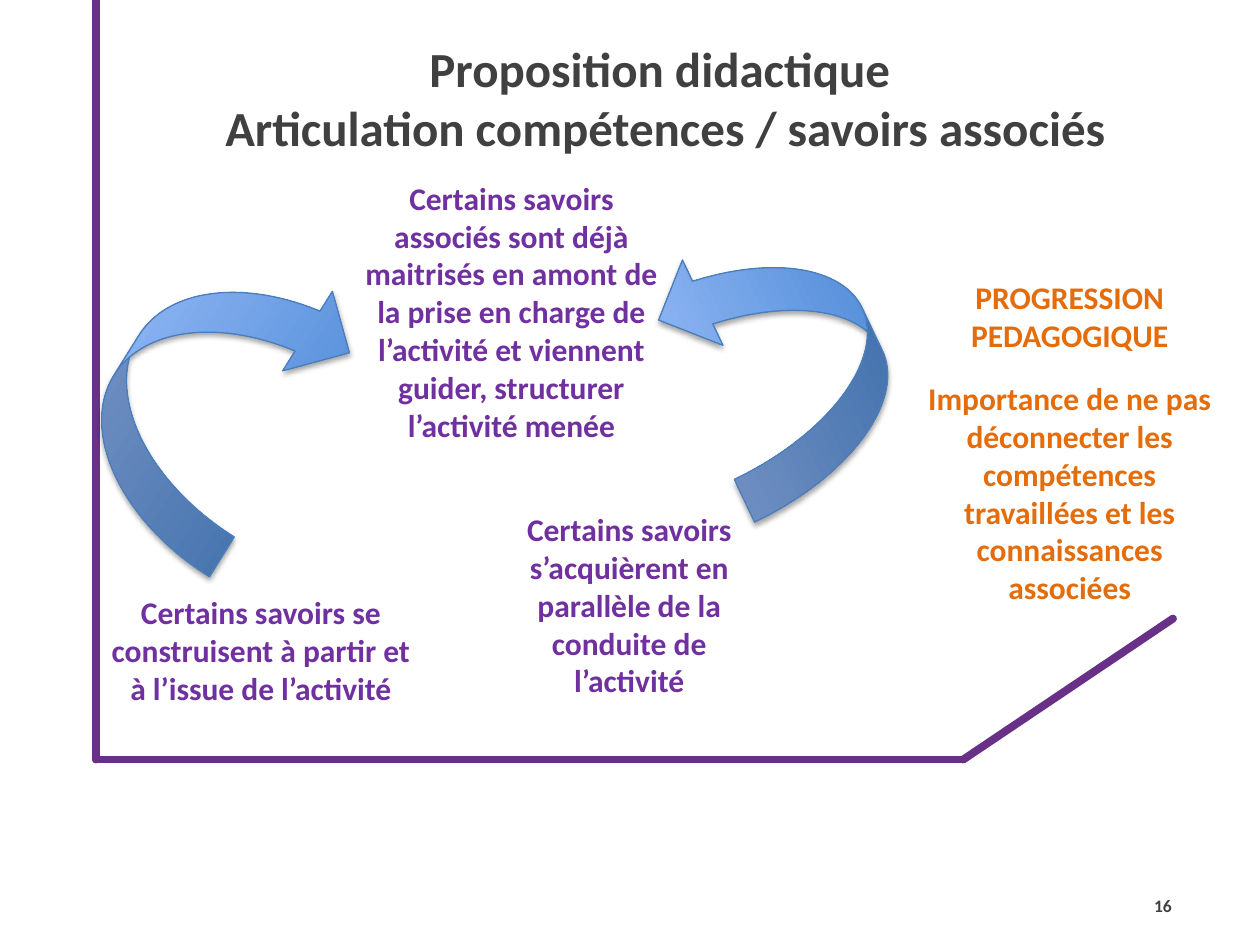
from lxml.etree import SubElement
from pptx import Presentation
from pptx.dml.color import RGBColor
from pptx.enum.shapes import MSO_CONNECTOR, MSO_SHAPE
from pptx.enum.text import MSO_ANCHOR, PP_ALIGN
from pptx.oxml import parse_xml
from pptx.oxml.ns import nsdecls, qn
from pptx.util import Pt

FRAME_PURPLE = RGBColor(0x68, 0x30, 0x86)
TEXT_PURPLE = RGBColor(0x70, 0x30, 0xA0)
ORANGE = RGBColor(0xE4, 0x6C, 0x0A)
DARK_GREY = RGBColor(0x40, 0x40, 0x40)
ARROW_DARK = RGBColor(0x3F, 0x80, 0xCE)
ARROW_LIGHT = RGBColor(0xA4, 0xC4, 0xFF)
ARROW_LINE = RGBColor(0x4B, 0x7E, 0xBC)

ARROW_SHADOW = (
    f'<a:effectLst {nsdecls("a")}>'
    '<a:outerShdw blurRad="39400" dist="22900" dir="5400000" rotWithShape="0">'
    '<a:srgbClr val="000000"><a:alpha val="35000"/></a:srgbClr>'
    "</a:outerShdw></a:effectLst>"
)


class SlideBuilder:
    """Holds the style and the current slide; lengths are in points."""

    font_name = "Calibri"
    frame_width = 4.5

    def __init__(self, slide):
        self.slide = slide

    def frame_line(self, start, end):
        line = self.slide.shapes.add_connector(
            MSO_CONNECTOR.STRAIGHT, *(Pt(value) for value in (*start, *end))
        )
        line.line.color.rgb = FRAME_PURPLE
        line.line.width = Pt(self.frame_width)
        properties = line._element.spPr
        properties.find(qn("a:ln")).set("cap", "rnd")
        SubElement(properties, qn("a:effectLst"))

    def text(self, box, lines, color, size=18, align=PP_ALIGN.CENTER,
             anchor=MSO_ANCHOR.TOP):
        """Each line is a (text, space before) pair."""
        shape = self.slide.shapes.add_textbox(*(Pt(value) for value in box))
        frame = shape.text_frame
        frame.word_wrap = True
        frame.vertical_anchor = anchor
        for index, (content, space_before) in enumerate(lines):
            paragraph = frame.add_paragraph() if index else frame.paragraphs[0]
            paragraph.text = content
            paragraph.alignment = align
            if space_before:
                paragraph.space_before = Pt(space_before)
            paragraph.font.name = self.font_name
            paragraph.font.size = Pt(size)
            paragraph.font.bold = True
            paragraph.font.color.rgb = color

    def curved_arrow(self, kind, box, rotation):
        shape = self.slide.shapes.add_shape(kind, *(Pt(value) for value in box))
        shape.rotation = rotation
        shape.fill.gradient()
        shape.fill.gradient_angle = 90
        for stop, color in zip(shape.fill.gradient_stops, (ARROW_DARK, ARROW_LIGHT)):
            stop.color.rgb = color
        shape.line.color.rgb = ARROW_LINE
        shape.line.width = Pt(0.75)
        shape._element.spPr.append(parse_xml(ARROW_SHADOW))


def main():
    presentation = Presentation()
    presentation.slide_width = Pt(720)
    presentation.slide_height = Pt(540)
    builder = SlideBuilder(presentation.slides.add_slide(presentation.slide_layouts[6]))

    # Purple frame
    corners = [(54.8, 0), (54.8, 434), (550.5, 434), (670.3, 353.5)]
    for start, end in zip(corners, corners[1:]):
        builder.frame_line(start, end)

    # Slide number and title
    builder.text((645, 503.3, 31.7, 28.8), [("16", 0)], DARK_GREY, 10,
                 PP_ALIGN.RIGHT, MSO_ANCHOR.MIDDLE)
    builder.text((65.5, 18.7, 629.3, 395.3),
                 [("Proposition didactique ", 0),
                  ("Articulation compétences / savoirs associés", 0)],
                 DARK_GREY, 28)

    # Three ways of linking knowledge and activity
    statements = [
        ((288.7, 288, 141.8, 116.6),
         "Certains savoirs s’acquièrent en parallèle de la conduite de l’activité"),
        ((198.7, 98.6, 187.2, 159.8),
         "Certains savoirs associés sont déjà maitrisés en amont de la prise en "
         "charge de l’activité et viennent guider, structurer l’activité menée"),
        ((52.6, 335.5, 193, 72.7),
         "Certains savoirs se construisent à partir et à l’issue de l’activité"),
    ]
    for box, content in statements:
        builder.text(box, [(content, 0)], TEXT_PURPLE)

    # Arrows towards the central statement
    builder.curved_arrow(MSO_SHAPE.CURVED_DOWN_ARROW, (32.4, 172.1, 177.8, 107.3), 302)
    builder.curved_arrow(MSO_SHAPE.CURVED_UP_ARROW, (369.4, 151.2, 154.8, 108), 244.6)

    # Teaching progression
    builder.text((517.7, 155.5, 187.2, 203.8),
                 [("PROGRESSION", 0), ("PEDAGOGIQUE", 0),
                  ("Importance de ne pas déconnecter les compétences travaillées "
                   "et les connaissances associées", 14.5)],
                 ORANGE)

    presentation.save("out.pptx")


if __name__ == "__main__":
    main()
